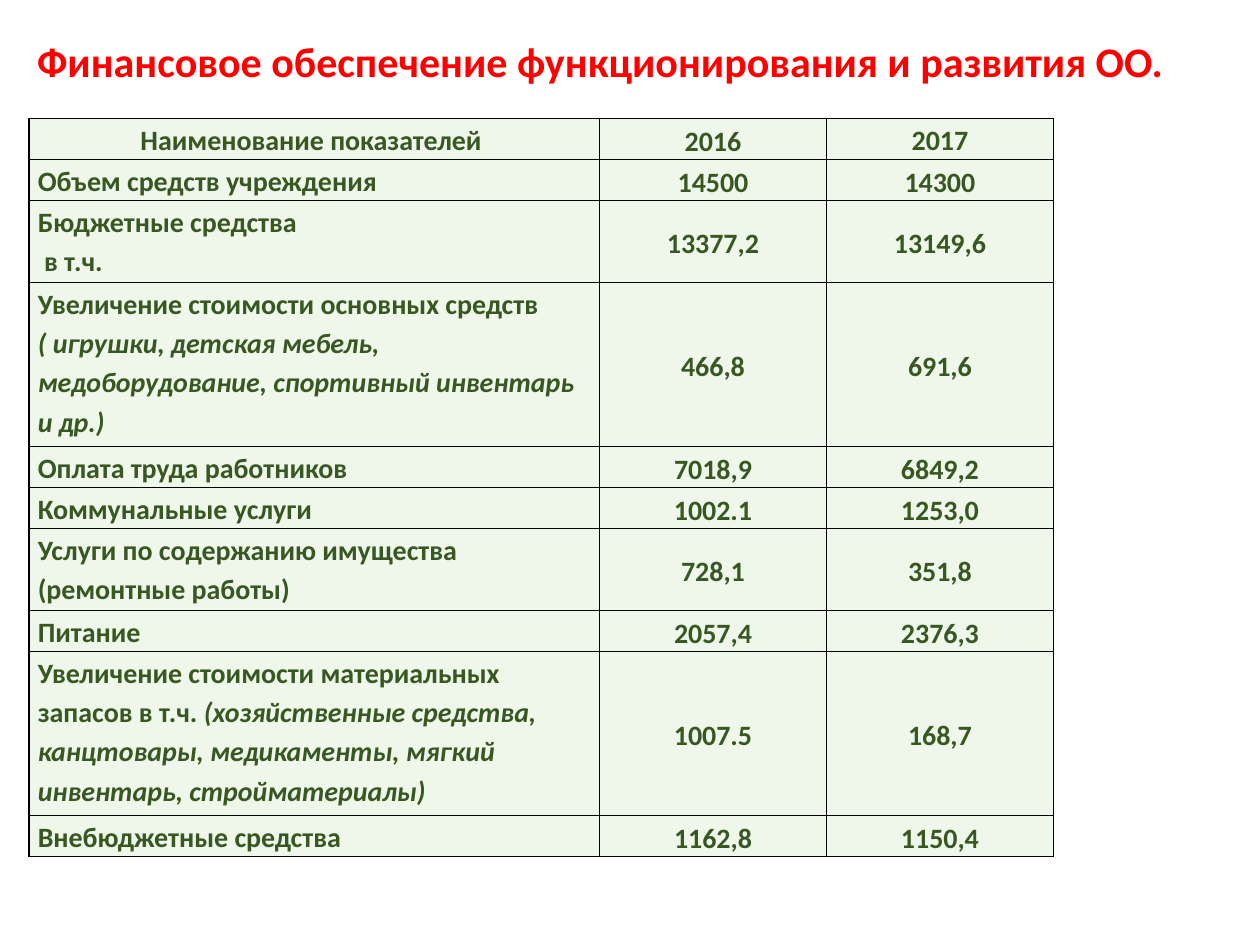
import pptx
import pptx.dml.color
import pptx.enum.text
import pptx.oxml
import pptx.oxml.ns
import pptx.util

Pt = pptx.util.Pt
RGB = pptx.dml.color.RGBColor
Align = pptx.enum.text.PP_ALIGN
Anchor = pptx.enum.text.MSO_ANCHOR

RED = RGB(0xFF, 0x00, 0x00)
GREEN = RGB(0x38, 0x57, 0x23)
PALE = RGB(0xEE, 0xF7, 0xE9)
BLACK = RGB(0x00, 0x00, 0x00)
FONT = "Calibri"

TITLE = "Финансовое обеспечение функционирования и развития ОО."
LINE = 23.44  # height of one line of table text
COLS = (326, 129.7, 129.7)
SIDES = (5, 5, 0.7)  # side margins of the cells in each column

# Lines the label takes, label (text after "|" is italic), 2016, 2017
ROWS = (
    (1, "Наименование показателей ", "2016", "2017"),
    (1, "Объем средств учреждения", "14500", "14300"),
    (2, "Бюджетные средства\n в т.ч.", "13377,2", "13149,6"),
    (4, "Увеличение стоимости основных средств\n"
        "|( игрушки, детская мебель, медоборудование, "
        "спортивный инвентарь и др.)", "466,8", "691,6"),
    (1, "Оплата труда работников", "7018,9", "6849,2"),
    (1, "Коммунальные услуги", "1002.1", "1253,0"),
    (2, "Услуги по содержанию имущества (ремонтные работы)",
     "728,1", "351,8"),
    (1, "Питание", "2057,4", "2376,3"),
    (4, "Увеличение стоимости материальных запасов в т.ч. "
        "|(хозяйственные средства, канцтовары, медикаменты, "
        "мягкий инвентарь, стройматериалы)", "1007.5", "168,7"),
    (1, "Внебюджетные средства", "1162,8", "1150,4"),
)


def style(para, size, color, align):
    para.alignment = align
    font = para.font
    font.name, font.size, font.bold = FONT, Pt(size), True
    font.color.rgb = color


def add_title(slide, left, top, width, height):
    title = slide.shapes.title
    title.left, title.top = Pt(left), Pt(top)
    title.width, title.height = Pt(width), Pt(height)
    frame = title.text_frame
    frame.text = TITLE
    frame.word_wrap = True
    frame.auto_size = pptx.enum.text.MSO_AUTO_SIZE.SHAPE_TO_FIT_TEXT
    frame.vertical_anchor = Anchor.TOP
    style(frame.paragraphs[0], 24, RED, Align.CENTER)


def add_edges(cell):
    """Draw a thin black line on all four sides; call before the fill."""
    props = cell._tc.get_or_add_tcPr()
    for side in ("lnL", "lnR", "lnT", "lnB"):
        props.append(pptx.oxml.parse_xml(
            f'<a:{side} {pptx.oxml.ns.nsdecls("a")} w="{Pt(1)}">'
            f'<a:solidFill><a:srgbClr val="{BLACK}"/></a:solidFill>'
            f'</a:{side}>'))


def fill_cell(cell, text, side, align, anchor):
    add_edges(cell)
    cell.fill.solid()
    cell.fill.fore_color.rgb = PALE
    cell.margin_left = cell.margin_right = Pt(side)
    cell.margin_top = cell.margin_bottom = Pt(0)
    cell.vertical_anchor = anchor
    frame = cell.text_frame
    for i, line in enumerate(text.split("\n")):
        para = frame.add_paragraph() if i else frame.paragraphs[0]
        para.line_spacing = 1.15
        style(para, 16, GREEN, align)
        plain, _, slant = line.partition("|")
        if plain:
            para.add_run().text = plain
        if slant:
            run = para.add_run()
            run.text = slant
            run.font.italic = True


def add_grid(slide, left, top):
    high = LINE * sum(row[0] for row in ROWS)
    table = slide.shapes.add_table(
        len(ROWS), len(COLS), Pt(left), Pt(top), Pt(sum(COLS)), Pt(high)).table
    for col, width in zip(table.columns, COLS):
        col.width = Pt(width)
    for r, (lines, *texts) in enumerate(ROWS):
        table.rows[r].height = Pt(LINE * lines)
        for c, text in enumerate(texts):
            label = c == 0
            head = r == 0
            align = Align.LEFT if label and not head else Align.CENTER
            raised = label or (head and c == 2)
            anchor = Anchor.TOP if raised else Anchor.MIDDLE
            fill_cell(table.cell(r, c), text, SIDES[c], align, anchor)


def main():
    deck = pptx.Presentation()
    deck.slide_width, deck.slide_height = Pt(720), Pt(540)
    slide = deck.slides.add_slide(deck.slide_layouts[5])
    add_title(slide, 0, 16.6, 686, 36)
    add_grid(slide, 16.6, 67.7)
    deck.save("out.pptx")


if __name__ == "__main__":
    main()
